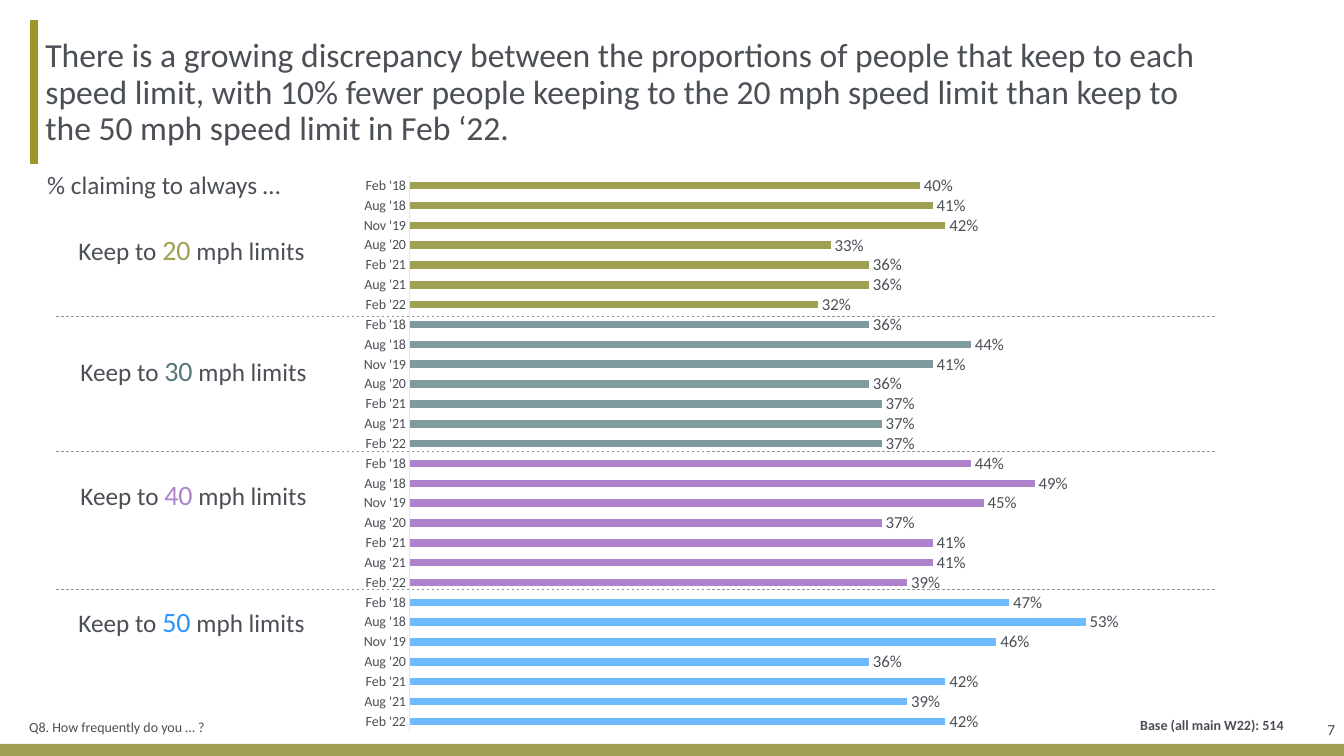
from dataclasses import dataclass

from lxml import etree
from pptx import Presentation
from pptx.chart.data import CategoryChartData
from pptx.dml.color import RGBColor
from pptx.enum.chart import XL_CHART_TYPE, XL_LABEL_POSITION, XL_TICK_MARK
from pptx.enum.dml import MSO_LINE
from pptx.enum.shapes import MSO_CONNECTOR, MSO_SHAPE
from pptx.enum.text import MSO_ANCHOR, MSO_AUTO_SIZE, PP_ALIGN
from pptx.oxml.ns import qn
from pptx.util import Inches, Pt

BAR = XL_CHART_TYPE.BAR_CLUSTERED
OUTSIDE = XL_LABEL_POSITION.OUTSIDE_END
NO_TICK = XL_TICK_MARK.NONE
DASH, STRAIGHT, RECT = MSO_LINE.DASH, MSO_CONNECTOR.STRAIGHT, MSO_SHAPE.RECTANGLE
TOP, MIDDLE = MSO_ANCHOR.TOP, MSO_ANCHOR.MIDDLE
NO_FIT = MSO_AUTO_SIZE.NONE
LEFT, RIGHT = PP_ALIGN.LEFT, PP_ALIGN.RIGHT


@dataclass(frozen=True)
class Theme:
    font: str = "Calibri"
    ink: str = "4B4F56"
    olive: str = "9FA052"
    accent: str = "9F962B"
    rule: str = "8F949D"
    axis: str = "E3E4E7"
    title: float = 24
    speed: float = 20
    label: float = 18
    value: float = 12
    page: float = 11
    note: float = 10


@dataclass(frozen=True)
class Limit:
    speed: str
    left: float
    top: float
    color: str
    fill: str
    shares: tuple[float, ...]


@dataclass(frozen=True)
class Run:
    text: str
    size: float
    color: str
    bold: bool = False


@dataclass(frozen=True)
class Line:
    start: tuple[float, float]
    end: tuple[float, float]
    color: str
    width: float
    dashed: bool = False


@dataclass(frozen=True)
class Note:
    box: tuple[float, float, float, float]
    run: Run
    align: PP_ALIGN = LEFT
    inset: bool = True


THEME = Theme()
TITLE = ("There is a growing discrepancy between the proportions of people that keep "
         "to each speed limit, with 10% fewer people keeping to the 20 mph speed limit "
         "than keep to the 50 mph speed limit in Feb ‘22.")
WAVES = ("Feb '18", "Aug '18", "Nov '19", "Aug '20", "Feb '21", "Aug '21", "Feb '22")
LIMITS = (
    Limit("20", 0.68, 2.26, THEME.olive, THEME.olive,
          (0.40, 0.41, 0.42, 0.33, 0.36, 0.36, 0.32)),
    Limit("30", 0.70, 3.46, "5C777B", "7F9B9F",
          (0.36, 0.44, 0.41, 0.36, 0.37, 0.37, 0.37)),
    Limit("40", 0.70, 4.69, "AF82CC", "AF82CC",
          (0.44, 0.49, 0.45, 0.37, 0.41, 0.41, 0.39)),
    Limit("50", 0.68, 5.95, "2896FC", "6FB9FD",
          (0.47, 0.53, 0.46, 0.36, 0.42, 0.39, 0.42)),
)
LINES = (
    Line((0.34, 0.2), (0.34, 1.63), THEME.accent, 6),
    *(Line((0.56, y), (12.06, y), THEME.rule, 0.5, True) for y in (3.14, 4.48, 5.85)),
)
NOTES = (
    Note((0.21, 7.06, 9.64, 0.31),
         Run("Q8. How frequently do you … ?", THEME.note, THEME.ink)),
    Note((8.79, 7.03, 3.94, 0.32),
         Run("Base (all main W22): 514", THEME.note, THEME.ink, True), RIGHT),
    Note((12.42, 6.95, 0.92, 0.58), Run("7", THEME.page, THEME.ink), RIGHT, False),
)


def style(font, size: float, color: str, bold: bool = False) -> None:
    font.name, font.size, font.bold = THEME.font, Pt(size), bold
    font.color.rgb = RGBColor.from_string(color)


def paint(fill, color: str) -> None:
    fill.solid()
    fill.fore_color.rgb = RGBColor.from_string(color)


def write(para, *runs: Run) -> None:
    for item in runs:
        run = para.add_run()
        run.text = item.text
        style(run.font, item.size, item.color, item.bold)


def inset(frame) -> None:
    """Keep only a narrow left margin."""
    frame.margin_left = Inches(0.08)
    frame.margin_top = frame.margin_right = frame.margin_bottom = 0


def add_text(slide, box: tuple[float, ...], *runs: Run, wrap: bool = False):
    frame = slide.shapes.add_textbox(*map(Inches, box)).text_frame
    frame.word_wrap = wrap
    frame.vertical_anchor = MIDDLE if wrap else TOP
    write(frame.paragraphs[0], *runs)
    return frame


def add_title(slide) -> None:
    title = slide.shapes.title
    title.left, title.top, title.width, title.height = map(
        Inches, (0.37, 0.22, 11.65, 1.41))
    frame = title.text_frame
    frame.word_wrap, frame.auto_size = True, NO_FIT
    frame.vertical_anchor = MIDDLE
    inset(frame)
    para = frame.paragraphs[0]
    para.alignment, para.line_spacing = LEFT, 0.9
    write(para, Run(TITLE, THEME.title, THEME.ink))


def add_line(slide, line: Line) -> None:
    shape = slide.shapes.add_connector(
        STRAIGHT, *map(Inches, line.start + line.end))
    shape.line.color.rgb = RGBColor.from_string(line.color)
    shape.line.width = Pt(line.width)
    if line.dashed:
        shape.line.dash_style = DASH
    etree.SubElement(shape.element.spPr, qn("a:effectLst"))


def add_note(slide, note: Note) -> None:
    frame = add_text(slide, note.box, note.run, wrap=True)
    frame.paragraphs[0].alignment = note.align
    if note.inset:
        inset(frame)


def add_bars(slide) -> None:
    data = CategoryChartData(number_format="0%")
    data.categories = WAVES * len(LIMITS)
    data.add_series("Series 1", [share for limit in LIMITS for share in limit.shares])
    chart = slide.shapes.add_chart(
        BAR, *map(Inches, (3.44, 1.63, 8.38, 5.74)), data).chart
    chart.has_legend = chart.has_title = False
    style(chart.font, THEME.value, THEME.ink)

    waves, scale = chart.category_axis, chart.value_axis
    waves.reverse_order = True
    waves.major_tick_mark = NO_TICK
    waves.format.line.color.rgb = RGBColor.from_string(THEME.axis)
    waves.format.line.width = Pt(0.75)
    style(waves.tick_labels.font, THEME.note, THEME.ink)
    scale.visible = scale.has_major_gridlines = False
    scale.minimum_scale, scale.maximum_scale = 0, 0.6

    plot = chart.plots[0]
    plot.gap_width, plot.vary_by_categories = 165, False
    series = plot.series[0]
    paint(series.format.fill, THEME.olive)
    for i, limit in enumerate(LIMITS[1:], 1):
        for j in range(len(WAVES)):
            paint(series.points[i * len(WAVES) + j].format.fill, limit.fill)
    labels = series.data_labels
    labels.show_value, labels.position = True, OUTSIDE
    labels.number_format, labels.number_format_is_linked = "0%", False
    style(labels.font, THEME.value, THEME.ink)


def main() -> None:
    deck = Presentation()
    deck.slide_width, deck.slide_height = Inches(13.33), Inches(7.5)
    slide = deck.slides.add_slide(deck.slide_layouts[5])
    foot = slide.shapes.add_shape(RECT, *map(Inches, (0, 7.38, 13.33, 0.12)))
    foot.shadow.inherit = False
    paint(foot.fill, THEME.olive)
    foot.line.fill.background()
    add_title(slide)
    for line in LINES:
        add_line(slide, line)
    add_text(slide, (0.37, 1.63, 2.56, 0.4),
             Run("% claiming to always …", THEME.label, THEME.ink))
    for limit in LIMITS:
        add_text(slide, (limit.left, limit.top, 2.47, 0.44),
                 Run("Keep to ", THEME.label, THEME.ink),
                 Run(limit.speed, THEME.speed, limit.color),
                 Run(" mph limits", THEME.label, THEME.ink))
    add_bars(slide)
    for note in NOTES:
        add_note(slide, note)
    deck.save("out.pptx")


if __name__ == "__main__":
    main()
